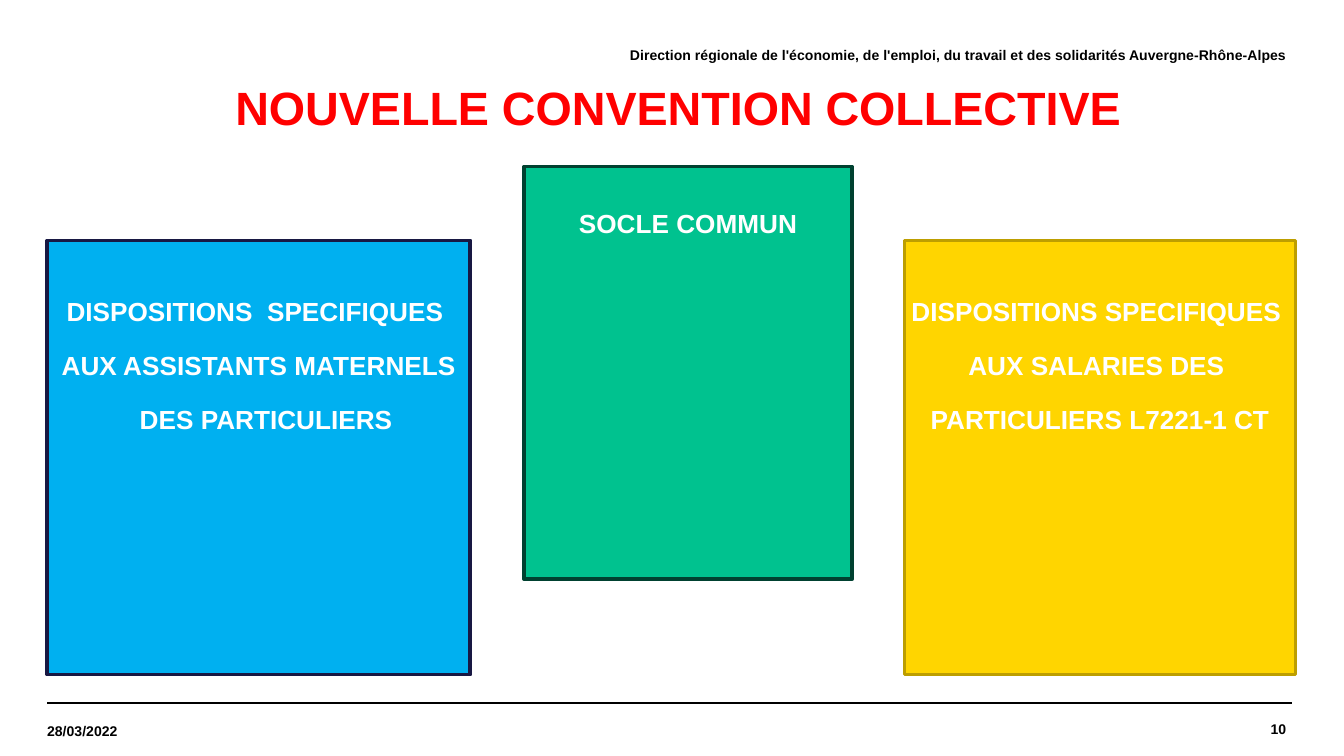
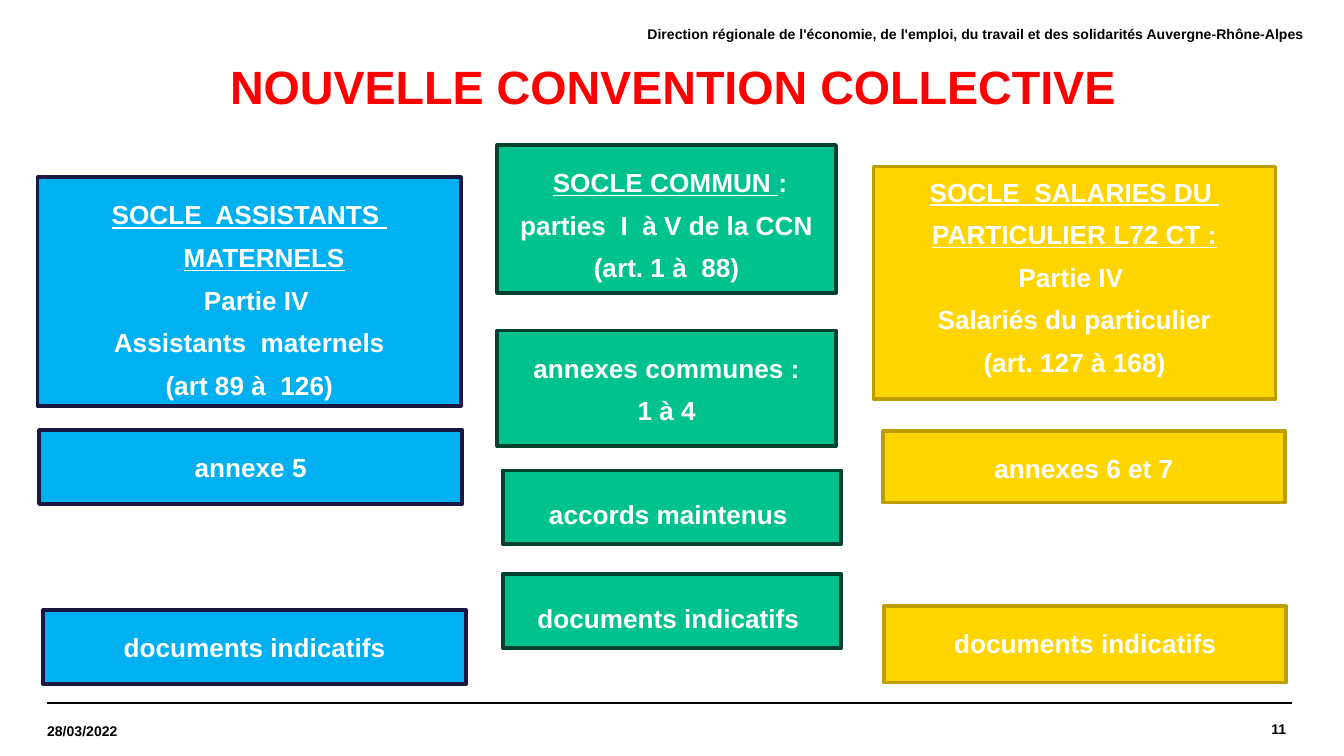
from dataclasses import dataclass

from lxml.etree import SubElement
from pptx import Presentation
from pptx.dml.color import RGBColor
from pptx.enum.shapes import MSO_CONNECTOR, MSO_SHAPE
from pptx.enum.text import MSO_ANCHOR, MSO_AUTO_SIZE, PP_ALIGN
from pptx.oxml.ns import qn
from pptx.util import Inches, Pt


# Theme
@dataclass(frozen=True)
class Theme:
    font: str = "Arial"
    title: str = "FF0000"
    ink: str = "000000"
    white: str = "FFFFFF"
    title_size: float = 25
    body_size: float = 14
    small_size: float = 7.5
    rule_width: float = 0.8
    border_width: float = 2


@dataclass(frozen=True)
class Family:
    fill: str
    border: str


@dataclass(frozen=True)
class Spacing:
    before: float
    after: float


@dataclass(frozen=True)
class Segment:
    text: str
    underline: bool = False


@dataclass(frozen=True)
class Line:
    segments: tuple[Segment, ...]
    indent: float = 0


@dataclass(frozen=True)
class Box:
    family: Family
    left: float
    top: float
    width: float
    height: float
    lines: tuple[Line, ...]
    inset: float = 0.16
    spacing: Spacing = Spacing(0, 6)


@dataclass(frozen=True)
class Page:
    number: int
    title_at: tuple[float, float]
    header_at: tuple[float, float]
    boxes: tuple[Box, ...]


THEME = Theme()
ASSISTANTS = Family("00B0F0", "181843")
COMMON = Family("00C28F", "004130")
EMPLOYEES = Family("FFD500", "BD9E00")
LOOSE = Spacing(4, 8)
TITLE = "NOUVELLE CONVENTION COLLECTIVE"
HEADER = ("Direction régionale de l'économie, de l'emploi, du travail "
          "et des solidarités Auvergne-Rhône-Alpes")
DATE = "28/03/2022"


def plain(text: str, indent: float = 0) -> Line:
    return Line((Segment(text),), indent)


def underlined(text: str, indent: float = 0, tail: str = "") -> Line:
    rest = (Segment(tail),) if tail else ()
    return Line((Segment(text, True),) + rest, indent)


# Content
SOCLE_W, ASSIST_W, EMPLOY_W = 2.52, 3.15, 2.99
DOCUMENTS = (plain("documents indicatifs"),)

PAGES = (
    Page(10, (0.43, 0.53), (3.14, 0.21), (
        Box(EMPLOYEES, 6.73, 1.79, 2.91, 3.23, (
            plain("DISPOSITIONS SPECIFIQUES "),
            plain("AUX SALARIES DES "),
            plain("PARTICULIERS L7221-1 CT")), 0.41, LOOSE),
        Box(COMMON, 3.9, 1.24, 2.44, 3.07,
            (plain("SOCLE COMMUN"),), 0.3, LOOSE),
        Box(ASSISTANTS, 0.35, 1.79, ASSIST_W, 3.23, (
            plain("DISPOSITIONS  SPECIFIQUES "),
            plain("AUX ASSISTANTS MATERNELS"),
            plain("DES PARTICULIERS", 0.11)), 0.41, LOOSE),
    )),
    Page(11, (0.39, 0.37), (3.27, 0.06), (
        Box(EMPLOYEES, 6.5, 1.24, EMPLOY_W, 1.73, (
            underlined("SOCLE  SALARIES DU "),
            underlined("PARTICULIER L72 CT :"),
            plain("Partie IV "),
            plain("Salariés du particulier"),
            plain("(art. 127 à 168)")), 0.07),
        Box(COMMON, 3.7, 1.08, SOCLE_W, 1.1, (
            underlined("SOCLE COMMUN ", 0.05, ":"),
            plain("parties  I  à V de la CCN"),
            plain("(art. 1 à  88)"))),
        Box(ASSISTANTS, 0.28, 1.32, ASSIST_W, 1.7, (
            underlined("SOCLE  ASSISTANTS "),
            underlined("MATERNELS", 0.22),
            plain("Partie IV ", 0.16),
            plain("Assistants  maternels"),
            plain("(art 89 à  126)"))),
        Box(EMPLOYEES, 6.57, 3.21, EMPLOY_W, 0.53,
            (plain("annexes 6 et 7"),)),
        Box(COMMON, 3.7, 2.46, SOCLE_W, 0.86,
            (plain("annexes communes :"), plain("1 à 4"))),
        Box(ASSISTANTS, 0.29, 3.2, ASSIST_W, 0.55, (plain("annexe 5"),)),
        Box(COMMON, 3.74, 4.27, SOCLE_W, 0.55,
            (plain("documents indicatifs "),), 0.21, LOOSE),
        Box(EMPLOYEES, 6.58, 4.51, EMPLOY_W, 0.57, DOCUMENTS),
        Box(ASSISTANTS, 0.32, 4.54, ASSIST_W, 0.55, DOCUMENTS),
        Box(COMMON, 3.74, 3.5, SOCLE_W, 0.55,
            (plain("accords maintenus "),), 0.21, LOOSE),
    )),
)


# Text helpers
def add_run(p, text: str, size: float, color: str, underline: bool = False) -> None:
    r = p.add_run()
    r.text = text
    r.font.name = THEME.font
    r.font.size = Pt(size)
    r.font.bold = True
    r.font.color.rgb = RGBColor.from_string(color)
    if underline:
        r.font.underline = True


def set_indent(p, inches: float) -> None:
    pPr = p._p.get_or_add_pPr()
    pPr.set("marL", str(Inches(inches)))
    pPr.set("indent", "0")


def set_frame(tf, anchor, top: float = 0) -> None:
    tf.word_wrap = True
    tf.vertical_anchor = anchor
    tf.margin_left = tf.margin_right = tf.margin_bottom = 0
    tf.margin_top = Inches(top)


# Drawing
def draw_label(s, text: str, left: float, top: float, width: float,
               height: float, align) -> None:
    sp = s.shapes.add_textbox(Inches(left), Inches(top), Inches(width), Inches(height))
    set_frame(sp.text_frame, MSO_ANCHOR.MIDDLE)
    p = sp.text_frame.paragraphs[0]
    p.alignment = align
    add_run(p, text, THEME.small_size, THEME.ink)


def draw_title(s, left: float, top: float) -> None:
    sp = s.shapes.title
    sp.left, sp.top = Inches(left), Inches(top)
    sp.width, sp.height = Inches(9.21), Inches(0.59)
    tf = sp.text_frame
    tf.word_wrap = True
    tf.auto_size = MSO_AUTO_SIZE.NONE
    tf.vertical_anchor = MSO_ANCHOR.MIDDLE
    p = tf.paragraphs[0]
    p.alignment = PP_ALIGN.CENTER
    p.line_spacing = 0.9
    set_indent(p, 0.02)
    add_run(p, TITLE, THEME.title_size, THEME.title)


def draw_box(s, box: Box) -> None:
    sp = s.shapes.add_shape(MSO_SHAPE.RECTANGLE, Inches(box.left), Inches(box.top),
                            Inches(box.width), Inches(box.height))
    sp.shadow.inherit = False
    sp.fill.solid()
    sp.fill.fore_color.rgb = RGBColor.from_string(box.family.fill)
    sp.line.color.rgb = RGBColor.from_string(box.family.border)
    sp.line.width = Pt(THEME.border_width)
    tf = sp.text_frame
    set_frame(tf, MSO_ANCHOR.TOP, box.inset)
    for i, line in enumerate(box.lines):
        p = tf.add_paragraph() if i else tf.paragraphs[0]
        p.alignment = PP_ALIGN.CENTER
        p.space_before = Pt(box.spacing.before if i else 0)
        p.space_after = Pt(box.spacing.after)
        if line.indent:
            set_indent(p, line.indent)
        for seg in line.segments:
            add_run(p, seg.text, THEME.body_size, THEME.white, seg.underline)


def draw_footer(s, number: int) -> None:
    # Two overlapping rules of equal length
    for left in (0.35, 0.39):
        rule = s.shapes.add_connector(MSO_CONNECTOR.STRAIGHT, Inches(left), Inches(5.23),
                                      Inches(left + 9.22), Inches(5.23))
        rule.line.color.rgb = RGBColor.from_string(THEME.ink)
        rule.line.width = Pt(THEME.rule_width)
        SubElement(rule._element.spPr, qn("a:effectLst"))
    draw_label(s, str(number), 8.09, 5.23, 1.48, 0.39, PP_ALIGN.RIGHT)
    draw_label(s, DATE, 0.35, 5.25, 1.32, 0.38, PP_ALIGN.LEFT)


def draw_page(prs, page: Page) -> None:
    s = prs.slides.add_slide(prs.slide_layouts[5])
    draw_footer(s, page.number)
    draw_title(s, *page.title_at)
    draw_label(s, HEADER, *page.header_at, 6.43, 0.39, PP_ALIGN.RIGHT)
    for box in page.boxes:
        draw_box(s, box)


def main() -> None:
    prs = Presentation()
    prs.slide_width = Inches(10)
    prs.slide_height = prs.slide_width * 9 // 16
    for page in PAGES:
        draw_page(prs, page)
    prs.save("out.pptx")


if __name__ == "__main__":
    main()
